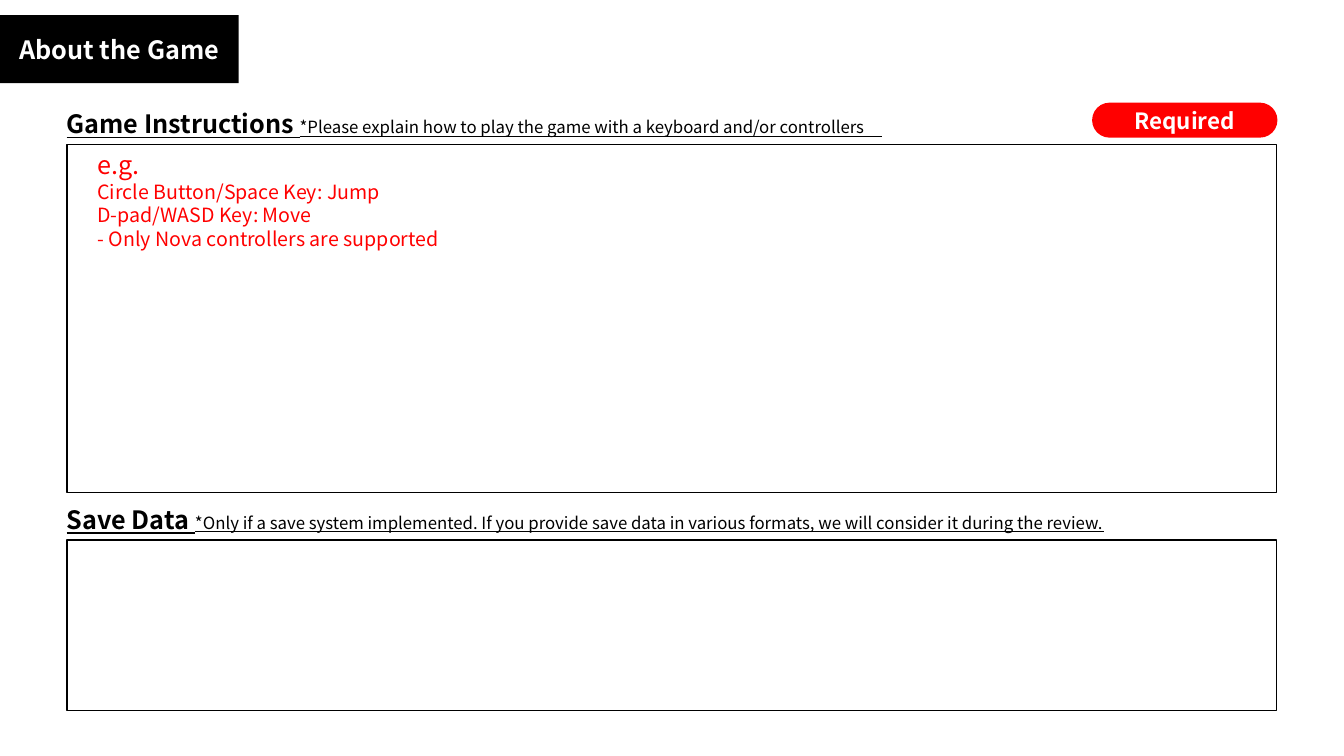
from pptx import Presentation
from pptx.dml.color import RGBColor
from pptx.enum.shapes import MSO_SHAPE
from pptx.enum.text import MSO_ANCHOR, MSO_AUTO_SIZE, PP_ALIGN
from pptx.util import Inches, Pt

RECT, PILL = MSO_SHAPE.RECTANGLE, MSO_SHAPE.ROUNDED_RECTANGLE
TOP, MIDDLE = MSO_ANCHOR.TOP, MSO_ANCHOR.MIDDLE
LEFT, CENTER = PP_ALIGN.LEFT, PP_ALIGN.CENTER
NO_FIT, GROW = MSO_AUTO_SIZE.NONE, MSO_AUTO_SIZE.SHAPE_TO_FIT_TEXT

BLACK = RGBColor(0x00, 0x00, 0x00)
WHITE = RGBColor(0xFF, 0xFF, 0xFF)
RED = RGBColor(0xFF, 0x00, 0x00)

COLUMNS, ROWS = 160, 90
MARGIN, CONTENT = 8, 144


class FormSlide:
    """Draws form elements on a grid of 160 columns by 90 rows."""

    font = "Noto Sans CJK JP"

    def __init__(self, prs):
        self.column = prs.slide_width / COLUMNS
        self.row = prs.slide_height / ROWS
        self.slide = prs.slides.add_slide(prs.slide_layouts[5])

    def place(self, x, y, w, h):
        return (round(x * self.column), round(y * self.row),
                round(w * self.column), round(h * self.row))

    def run(self, p, text, size, color, bold=False, underline=None):
        r = p.add_run()
        r.text = text
        r.font.name = self.font
        r.font.size = Pt(size)
        r.font.color.rgb = color
        r.font.bold = bold
        r.font.underline = underline

    def label(self, sp, text, size):
        tf = sp.text_frame
        tf.word_wrap = True
        tf.auto_size = NO_FIT
        tf.vertical_anchor = MIDDLE
        p = tf.paragraphs[0]
        p.alignment = CENTER
        self.run(p, text, size, WHITE, bold=True)

    def title(self, text, *cell):
        sp = self.slide.shapes.title
        sp.left, sp.top, sp.width, sp.height = self.place(*cell)
        sp.fill.solid()
        sp.fill.fore_color.rgb = BLACK
        self.label(sp, text, 18)

    def shape(self, kind, fill, line, *cell):
        sp = self.slide.shapes.add_shape(kind, *self.place(*cell))
        sp.shadow.inherit = False
        sp.fill.solid()
        sp.fill.fore_color.rgb = fill
        sp.line.color.rgb = line
        sp.line.width = Pt(1)
        return sp

    def badge(self, text, *cell):
        sp = self.shape(PILL, RED, RED, *cell)
        sp.adjustments[0] = 0.5
        self.label(sp, text, 16)

    def heading(self, text, note, *cell):
        tf = self.slide.shapes.add_textbox(*self.place(*cell)).text_frame
        tf.word_wrap = True
        tf.auto_size = GROW
        p = tf.paragraphs[0]
        self.run(p, text, 18, BLACK, bold=True, underline=True)
        self.run(p, note, 12, BLACK, underline=True)

    def answer_box(self, y, h, lines=()):
        tf = self.shape(RECT, WHITE, BLACK, MARGIN, y, CONTENT, h).text_frame
        tf.word_wrap = True
        tf.vertical_anchor = TOP
        tf.margin_left = Inches(0.3)
        for i, (text, size) in enumerate(lines):
            p = tf.add_paragraph() if i else tf.paragraphs[0]
            p.alignment = LEFT
            self.run(p, text, size, RED)


def main():
    prs = Presentation()
    prs.slide_width, prs.slide_height = Inches(13.33), Inches(7.5)
    s = FormSlide(prs)
    s.title("About the Game", 0, 1.8, 28.4, 8.1)
    s.heading("Game Instructions ",
              "*Please explain how to play the game with a keyboard and/or controllers　",
              6.75, 12.3, 129, 4.85)
    s.badge("Required", 130.1, 12.3, 21.9, 4)
    s.answer_box(17.2, 41.4, [
        ("e.g.", 18),
        ("Circle Button/Space Key: Jump", 14),
        ("D-pad/WASD Key: Move", 14),
        ("- Only Nova controllers are supported", 14),
    ])
    s.heading("Save Data ",
              "*Only if a save system implemented. If you provide save data "
              "in various formats, we will consider it during the review.",
              6.75, 59.4, 146.5, 4.85)
    s.answer_box(64.3, 20.3)
    prs.save("out.pptx")


if __name__ == "__main__":
    main()
